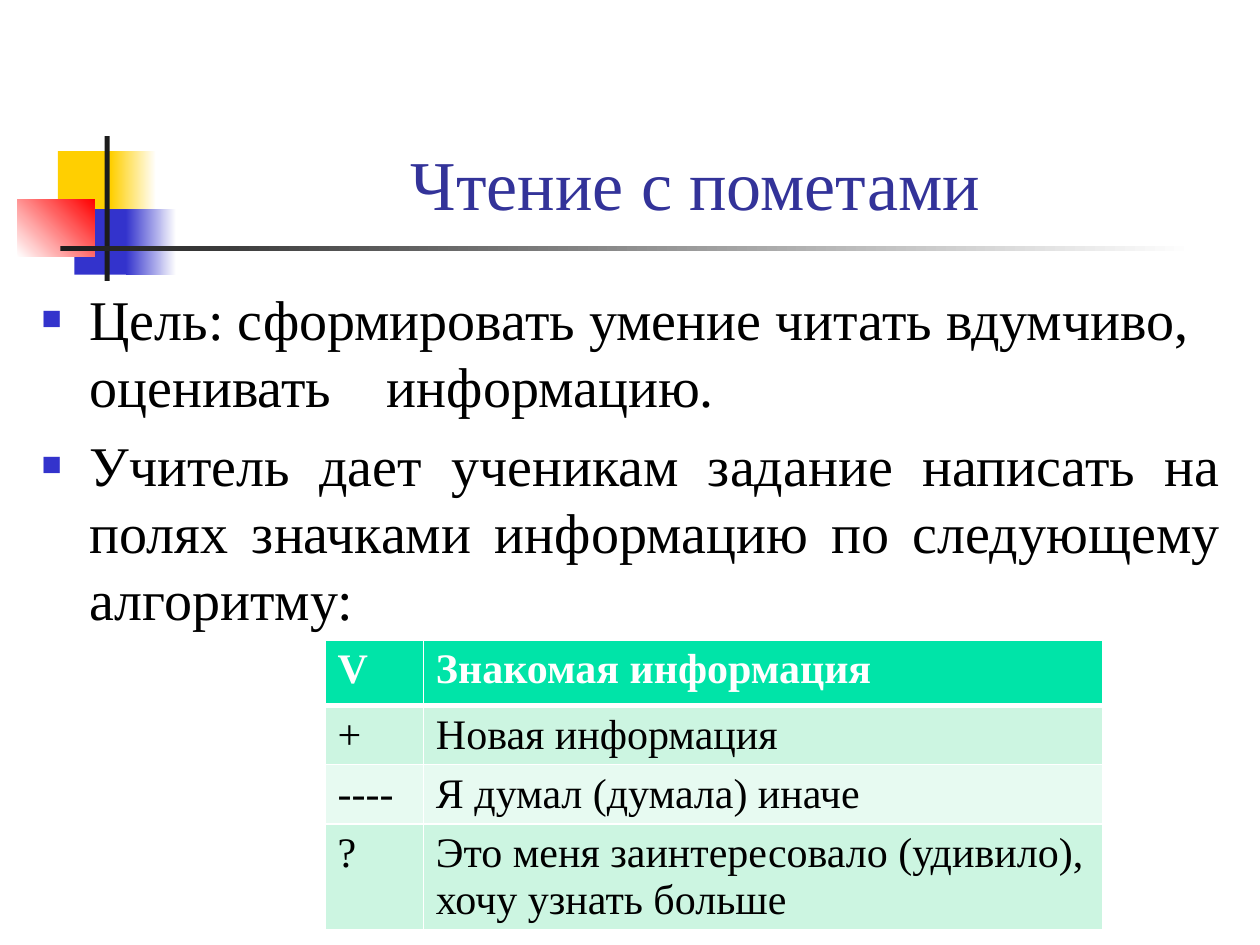
from dataclasses import dataclass
from lxml.etree import SubElement
from pptx import Presentation
from pptx.dml.color import RGBColor
from pptx.enum.shapes import MSO_SHAPE as SHAPE
from pptx.enum.text import MSO_ANCHOR as ANCHOR, MSO_AUTO_SIZE as FIT, PP_ALIGN as ALIGN
from pptx.oxml.ns import qn
from pptx.util import Inches, Pt


@dataclass(frozen=True)
class Theme:
    font: str = "Times New Roman"
    title_size: int = 40
    body_size: int = 32
    table_size: int = 24
    title: str = "333399"
    text: str = "000000"
    white: str = "FFFFFF"
    yellow: str = "FFCF01"
    blue: str = "3333CC"
    red: str = "FF0000"
    dark: str = "1C1C1C"
    header: str = "00E4A8"
    bands: tuple = ("CCF5E1", "E7FAF1")


T = Theme()

DECOR = [
    ((0.46, 1.2, 0.48, 0.52), (T.yellow,), 0),
    ((0.88, 1.2, 0.36, 0.52), (T.yellow, T.white), 0),
    ((0.59, 1.66, 0.46, 0.52), (T.blue,), 0),
    ((1, 1.66, 0.4, 0.52), (T.blue, T.white), 0),
    ((0.14, 1.58, 0.61, 0.46), (T.white, T.red), 45),
    ((0.83, 1.08, 0.04, 1.15), (T.dark,), 0),
    ((0.48, 1.95, 9, 0.04), (T.dark, T.white), 0),
]
GOALS = [
    ("Цель: сформировать умение читать вдумчиво, оценивать\tинформацию.", ALIGN.LEFT),
    ("Учитель дает ученикам задание написать на полях значками "
     "информацию по следующему алгоритму:", ALIGN.JUSTIFY),
]
MARKS = [
    ("V", "Знакомая информация"),
    ("+", "Новая информация"),
    ("----", "Я думал (думала) иначе"),
    ("?", "Это меня заинтересовало (удивило), хочу узнать больше"),
]
COL_WIDTHS = (0.78, 5.39)
ROW_HEIGHTS = (0.52, 0.47, 0.47, 0.84)


def write(p, text, size, color=T.text, bold=False, align=ALIGN.LEFT):
    p.alignment = align
    r = p.add_run()
    r.text = text
    r.font.name = T.font
    r.font.size = Pt(size)
    r.font.bold = bold
    r.font.color.rgb = RGBColor.from_string(color)


def add_block(s, box, colors, angle):
    sp = s.shapes.add_shape(SHAPE.RECTANGLE, *map(Inches, box))
    sp.shadow.inherit = False
    sp.line.fill.background()
    if len(colors) == 1:
        sp.fill.solid()
        sp.fill.fore_color.rgb = RGBColor.from_string(colors[0])
        return
    sp.fill.gradient()
    sp.fill.gradient_angle = angle
    for stop, color in zip(sp.fill.gradient_stops, colors):
        stop.color.rgb = RGBColor.from_string(color)


def place(sp, box, anchor):
    sp.left, sp.top, sp.width, sp.height = map(Inches, box)
    tf = sp.text_frame
    tf.word_wrap = True
    tf.auto_size = FIT.NONE
    tf.vertical_anchor = anchor
    return tf


def add_bullet(p):
    p.space_before = Pt(0.2 * T.body_size)
    pPr = p._p.get_or_add_pPr()
    pPr.set("marL", str(Inches(0.38)))
    pPr.set("indent", str(Inches(-0.38)))
    SubElement(SubElement(pPr, qn("a:buClr")), qn("a:srgbClr"), val=T.blue)
    SubElement(pPr, qn("a:buSzPct"), val="60000")
    SubElement(pPr, qn("a:buFont"), typeface=T.font)
    SubElement(pPr, qn("a:buChar"), char="■")
    tabs = SubElement(pPr, qn("a:tabLst"))
    SubElement(tabs, qn("a:tab"), pos=str(Inches(2.74)), algn="l")


def add_goals(sp):
    tf = place(sp, (0.23, 2.21, 9.56, 4.5), ANCHOR.TOP)
    for i, (text, align) in enumerate(GOALS):
        p = tf.add_paragraph() if i else tf.paragraphs[0]
        write(p, text, T.body_size, align=align)
        add_bullet(p)


def set_borders(cell, **widths):
    tcPr = cell._tc.get_or_add_tcPr()
    for side in "LRTB":
        ln = SubElement(tcPr, qn("a:ln" + side), w=str(Pt(widths.get(side, 1))))
        SubElement(SubElement(ln, qn("a:solidFill")), qn("a:srgbClr"), val=T.white)


def add_marks_table(s):
    box = (2.58, 5.08, sum(COL_WIDTHS), sum(ROW_HEIGHTS))
    table = s.shapes.add_table(len(MARKS), len(COL_WIDTHS), *map(Inches, box)).table
    for col, width in zip(table.columns, COL_WIDTHS):
        col.width = Inches(width)
    for i, (row, height) in enumerate(zip(table.rows, ROW_HEIGHTS)):
        row.height = Inches(height)
        head = i == 0
        fill = T.header if head else T.bands[(i - 1) % 2]
        for cell, text in zip(row.cells, MARKS[i]):
            set_borders(cell, B=3 if head else 1, T=3 if i == 1 else 1)
            cell.fill.solid()
            cell.fill.fore_color.rgb = RGBColor.from_string(fill)
            write(cell.text_frame.paragraphs[0], text, T.table_size,
                  color=T.white if head else T.text, bold=head)


def main():
    prs = Presentation()
    prs.slide_width, prs.slide_height = Inches(10), Inches(7.5)
    s = prs.slides.add_slide(prs.slide_layouts[1])
    title, body = s.placeholders
    for box, colors, angle in DECOR:
        add_block(s, box, colors, angle)
    for sp in (title, body):
        s.shapes._spTree.append(sp._element)
    tf = place(title, (1.26, 0.23, 8.52, 1.6), ANCHOR.BOTTOM)
    write(tf.paragraphs[0], "Чтение с пометами", T.title_size,
          color=T.title, align=ALIGN.CENTER)
    add_goals(body)
    add_marks_table(s)
    prs.save("out.pptx")


if __name__ == "__main__":
    main()
